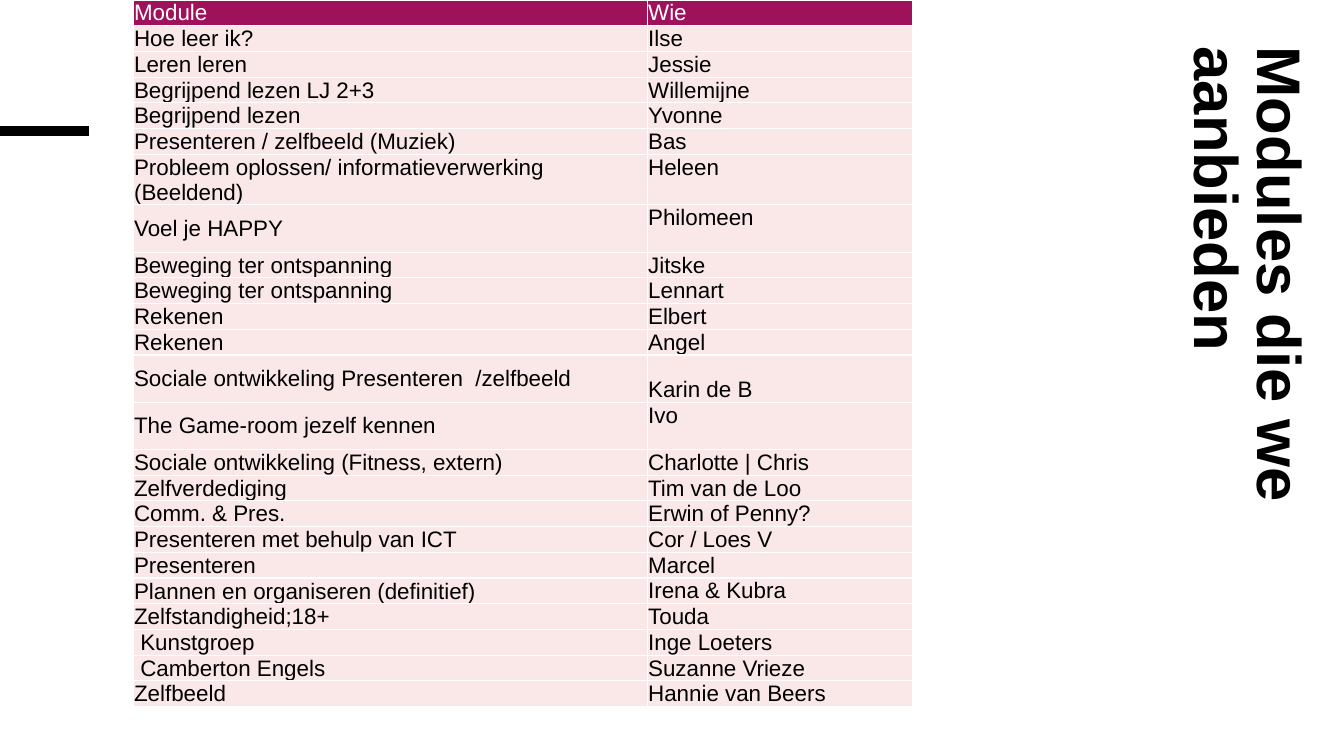
from lxml import etree
from pptx import Presentation
from pptx.dml.color import RGBColor
from pptx.enum.shapes import MSO_CONNECTOR
from pptx.enum.text import MSO_ANCHOR, MSO_AUTO_SIZE, PP_ALIGN
from pptx.oxml.ns import qn
from pptx.util import Cm, Pt

TOP, MIDDLE, BOTTOM = MSO_ANCHOR.TOP, MSO_ANCHOR.MIDDLE, MSO_ANCHOR.BOTTOM
LEFT = PP_ALIGN.LEFT
STRAIGHT = MSO_CONNECTOR.STRAIGHT
NO_AUTOFIT = MSO_AUTO_SIZE.NONE

BLACK = RGBColor(0x00, 0x00, 0x00)
WHITE = RGBColor(0xFF, 0xFF, 0xFF)
MAGENTA = RGBColor(0xA0, 0x11, 0x5C)
PINK = RGBColor(0xFA, 0xE8, 0xE8)
FONT = "Arial"
TITLE_ONLY = 5

HEADER = ("Module", "Wie")
MODULES = [
    ("Hoe leer ik?", "Ilse"),
    ("Leren leren", "Jessie"),
    ("Begrijpend lezen LJ 2+3", "Willemijne"),
    ("Begrijpend lezen", "Yvonne"),
    ("Presenteren / zelfbeeld (Muziek)", "Bas"),
    ("Probleem oplossen/ informatieverwerking (Beeldend)", "Heleen"),
    ("Voel je HAPPY", "Philomeen"),
    ("Beweging ter ontspanning", "Jitske"),
    ("Beweging ter ontspanning", "Lennart"),
    ("Rekenen", "Elbert"),
    ("Rekenen", "Angel"),
    ("Sociale ontwikkeling Presenteren  /zelfbeeld", "Karin de B"),
    ("The Game-room jezelf kennen", "Ivo"),
    ("Sociale ontwikkeling (Fitness, extern)", "Charlotte | Chris"),
    ("Zelfverdediging", "Tim van de Loo"),
    ("Comm. & Pres.", "Erwin of Penny?"),
    ("Presenteren met behulp van ICT", "Cor / Loes V"),
    ("Presenteren", "Marcel"),
    ("Plannen en organiseren (definitief)", "Irena & Kubra"),
    ("Zelfstandigheid;18+", "Touda"),
    (" Kunstgroep", "Inge Loeters"),
    (" Camberton Engels", "Suzanne Vrieze"),
    ("Zelfbeeld", "Hannie van Beers"),
]
TALL_ROWS = {6, 7, 12, 13}
BOTTOM_NAMES = {"Karin de B"}
COLUMN_SHARES = (0.66, 0.34)
ROW_HEIGHT = Cm(0.61)
TALL_ROW_HEIGHT = Cm(1.19)


def add_span(para, text, size, color, bold=False):
    span = para.add_run()
    span.text = text
    span.font.name = FONT
    span.font.size = Pt(size)
    span.font.bold = bold
    span.font.color.rgb = color


def add_rule(page, left, top, width):
    rule = page.shapes.add_connector(STRAIGHT, left, top, left + width, top)
    rule.line.color.rgb = BLACK
    rule.line.width = Pt(6.75)
    etree.SubElement(rule._element.spPr, qn("a:effectLst"))


def place_title(page, left, top, width, height):
    """Turn the title a quarter so it reads downwards; the box is unrotated."""
    title = page.shapes.title
    title.left, title.top, title.width, title.height = left, top, width, height
    title.rotation = 90
    frame = title.text_frame
    frame.word_wrap = True
    frame.auto_size = NO_AUTOFIT
    frame.vertical_anchor = MIDDLE
    para = frame.paragraphs[0]
    para.alignment = LEFT
    para.line_spacing = 0.85
    add_span(para, "Modules die we aanbieden", 44, BLACK, bold=True)


def add_borders(cell):
    properties = cell._tc.get_or_add_tcPr()
    for position, side in enumerate(("lnL", "lnR", "lnT", "lnB")):
        border = etree.Element(qn(f"a:{side}"), w=str(Pt(1)))
        fill = etree.SubElement(border, qn("a:solidFill"))
        etree.SubElement(fill, qn("a:srgbClr"), val=str(WHITE))
        properties.insert(position, border)


def fill_cell(cell, text, text_color, fill_color, anchor):
    cell.margin_left = cell.margin_right = cell.margin_top = Cm(0.02)
    cell.margin_bottom = 0
    cell.vertical_anchor = anchor
    cell.fill.solid()
    cell.fill.fore_color.rgb = fill_color
    add_borders(cell)
    add_span(cell.text_frame.paragraphs[0], text, 16, text_color)


def add_module_table(page, left, top, width, height):
    rows = [HEADER, *MODULES]
    box = page.shapes.add_table(len(rows), len(HEADER), left, top, width, height)
    table = box.table
    for column, share in zip(table.columns, COLUMN_SHARES):
        column.width = int(width * share)
    for index, (module, name) in enumerate(rows):
        table.rows[index].height = TALL_ROW_HEIGHT if index in TALL_ROWS else ROW_HEIGHT
        is_header = index == 0
        colors = (WHITE, MAGENTA) if is_header else (BLACK, PINK)
        name_anchor = BOTTOM if name in BOTTOM_NAMES else TOP
        fill_cell(table.cell(index, 0), module, *colors, TOP if is_header else MIDDLE)
        fill_cell(table.cell(index, 1), name, *colors, name_anchor)
    box.height = height


def main():
    deck = Presentation()
    deck.slide_width, deck.slide_height = Cm(33.87), Cm(19.05)
    page = deck.slides.add_slide(deck.slide_layouts[TITLE_ONLY])
    add_rule(page, 0, Cm(3.3), Cm(2.25))
    place_title(page, Cm(23.06), Cm(7.44), Cm(16.64), Cm(3.6))
    add_module_table(page, Cm(3.36), 0, Cm(19.63), Cm(18.77))
    deck.save("out.pptx")


if __name__ == "__main__":
    main()
